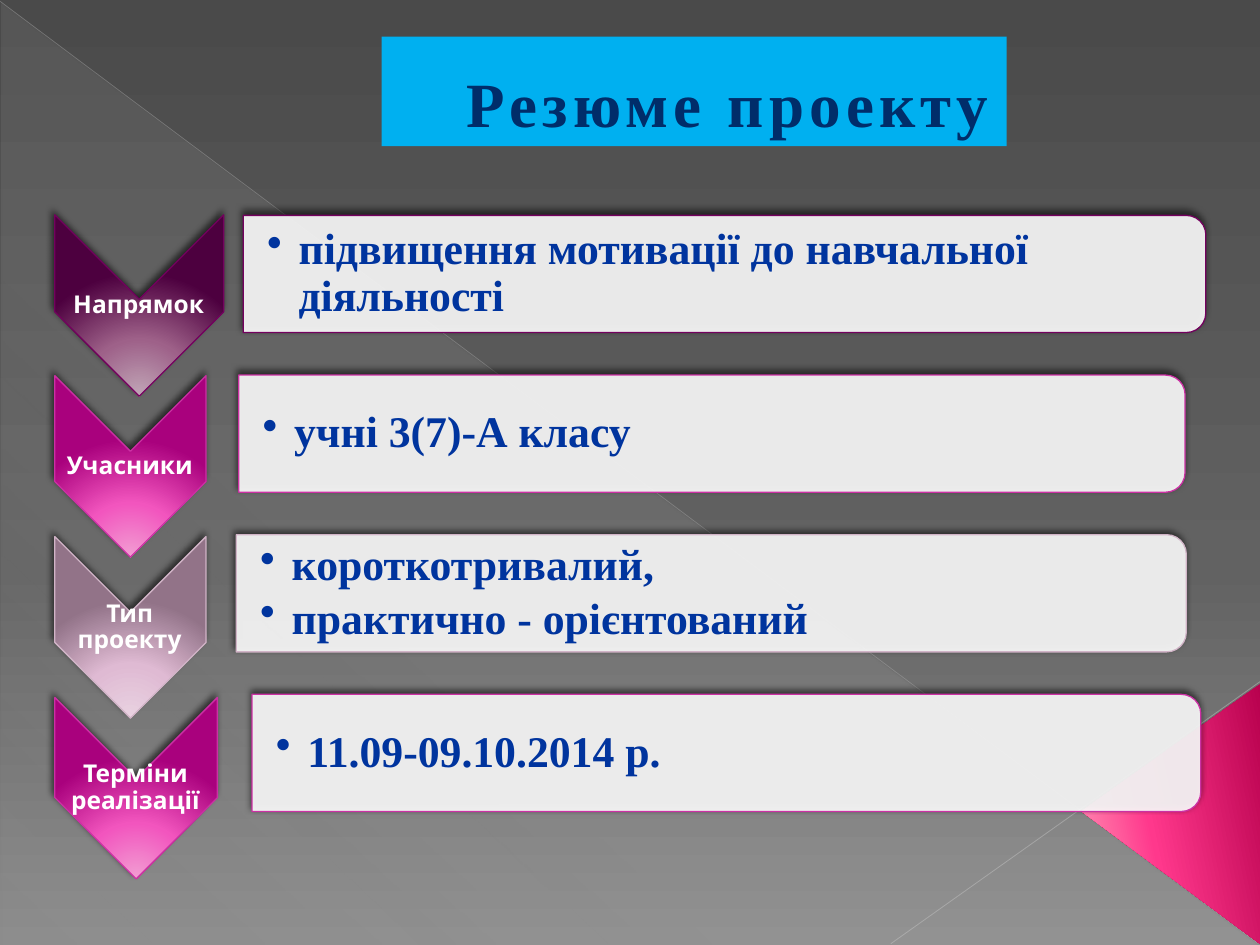
from dataclasses import dataclass

from lxml import etree
from pptx import Presentation
from pptx.dml.color import RGBColor
from pptx.enum.shapes import MSO_CONNECTOR, MSO_SHAPE
from pptx.enum.text import MSO_ANCHOR, PP_ALIGN
from pptx.oxml.ns import qn
from pptx.util import Inches, Pt

STRAIGHT = MSO_CONNECTOR.STRAIGHT
RECTANGLE, TRIANGLE = MSO_SHAPE.RECTANGLE, MSO_SHAPE.ISOSCELES_TRIANGLE
RIGHT_TRIANGLE, CHEVRON = MSO_SHAPE.RIGHT_TRIANGLE, MSO_SHAPE.CHEVRON
PANEL = MSO_SHAPE.ROUND_2_SAME_RECTANGLE
MIDDLE, BOTTOM = MSO_ANCHOR.MIDDLE, MSO_ANCHOR.BOTTOM
CENTER, LEFT = PP_ALIGN.CENTER, PP_ALIGN.LEFT
COLUMNS, ROWS = 100, 75


@dataclass(frozen=True)
class Theme:
    """Colours, fonts and type sizes of the slide."""
    serif: str = "Times New Roman"
    sans: str = "Quicksand"
    title_size: float = 36
    body_size: float = 25
    label_size: float = 14
    title: str = "002D6A"
    title_fill: str = "00B0F0"
    body: str = "00349E"
    white: str = "FFFFFF"
    shadow: str = "000000"
    diagonal: str = "BFBFBF"
    corner_line: str = "C6C6C6"
    background: tuple = ((0, "4A4A4A"), (60, "626262"), (100, "8C8C8C"))
    veil: tuple = ((0, "D2D2D2", 10), (70, "D2D2D2", 8), (100, "D2D2D2", 1))
    corner: tuple = ((0, "B8014E"), (60, "FF388C"), (100, "FF9CB9"))
    plum: tuple = ("C1A6B7", "9E6189", "4D003F", "73005E")
    magenta: tuple = ("F29ED3", "F255BE", "A9017D", "CC30A4")
    mauve: tuple = ("E9D2E1", "DFBAD3", "927388", "D1B4C7")


def add_child(parent, tag, **attributes):
    """Append an XML child with the given attributes."""
    return etree.SubElement(parent, qn(tag), {key: str(value) for key, value in attributes.items()})


def set_alpha(holder, percent):
    """Make the solid fill inside an element translucent."""
    color = holder.find(".//" + qn("a:srgbClr"))
    add_child(color, "a:alpha", val=percent * 1000)


def set_gradient(holder, stops, angle=None):
    """Replace a solid fill by a linear gradient, or a glow from below without an angle."""
    turns = 0 if angle is None else 1
    gradient = etree.Element(qn("a:gradFill"), {"rotWithShape": str(turns)})
    stop_list = add_child(gradient, "a:gsLst")
    for position, color, *alpha in stops:
        stop = add_child(stop_list, "a:gs", pos=position * 1000)
        tone = add_child(stop, "a:srgbClr", val=color)
        if alpha:
            add_child(tone, "a:alpha", val=alpha[0] * 1000)
    if angle is None:
        glow = add_child(gradient, "a:path", path="circle")
        add_child(glow, "a:fillToRect", l=50000, t=155000, r=50000, b=-55000)
    else:
        add_child(gradient, "a:lin", ang=angle * 60000, scaled=0)
    holder.replace(holder.find(qn("a:solidFill")), gradient)


class SlideBuilder:
    """Holds the theme and the current slide and draws on a grid."""

    def __init__(self, presentation, theme):
        """Add a blank slide and work out the grid."""
        self.theme = theme
        self.column = presentation.slide_width / COLUMNS
        self.row = presentation.slide_height / ROWS
        self.slide = presentation.slides.add_slide(presentation.slide_layouts[6])

    def place(self, x, y, width, height):
        """Turn grid units into slide lengths."""
        return (round(x * self.column), round(y * self.row),
                round(width * self.column), round(height * self.row))

    def background(self, stops):
        """Fill the background from top to bottom."""
        self.slide.background.fill.solid()
        set_gradient(self.slide.element.find(".//" + qn("p:bgPr")), stops, 90)

    def line(self, start, end, color, width, alpha):
        """Draw a faint straight line."""
        connector = self.slide.shapes.add_connector(
            STRAIGHT, *self.place(*start, *end))
        connector.line.color.rgb = RGBColor.from_string(color)
        connector.line.width = Pt(width)
        properties = connector.element.spPr
        set_alpha(properties, alpha)
        add_child(properties, "a:effectLst")

    def shape(self, kind, box, fill, outline=None, turn=0):
        """Draw a preset shape whose box is given as it appears after a quarter turn."""
        x, y, width, height = box
        if turn:
            x, y = x + (width - height) / 2, y + (height - width) / 2
            width, height = height, width
        shape = self.slide.shapes.add_shape(kind, *self.place(x, y, width, height))
        shape.rotation = turn
        shape.fill.solid()
        shape.fill.fore_color.rgb = RGBColor.from_string(fill)
        shape.shadow.inherit = False
        if outline:
            shape.line.color.rgb = RGBColor.from_string(outline)
            shape.line.width = Pt(0.75)
            self.shadow(shape)
        else:
            shape.line.fill.background()
        return shape

    def shadow(self, shape):
        """Cast a soft shadow to the upper left."""
        effects = shape.element.spPr.find(qn("a:effectLst"))
        outer = add_child(effects, "a:outerShdw", blurRad=Pt(4), dist=Pt(3),
                          dir=245 * 60000, rotWithShape=0)
        add_child(add_child(outer, "a:srgbClr", val=self.theme.shadow), "a:alpha", val=60000)

    def run(self, paragraph, text, font, size, color):
        """Add one bold run."""
        run = paragraph.add_run()
        run.text = text
        run.font.name, run.font.size, run.font.bold = font, Pt(size), True
        run.font.color.rgb = RGBColor.from_string(color)
        return run

    def title(self, box, text):
        """Draw the title on its coloured plate."""
        frame = self.shape(RECTANGLE, box, self.theme.title_fill).text_frame
        frame.word_wrap, frame.vertical_anchor = True, BOTTOM
        paragraph = frame.paragraphs[0]
        paragraph.alignment = CENTER
        paragraph._p.get_or_add_pPr().set("marL", str(Inches(0.53)))
        run = self.run(paragraph, text, self.theme.serif, self.theme.title_size, self.theme.title)
        run.font._element.set("spc", "300")

    def text(self, box, texts, font, size, color, inset, left_inset, after, bullets=False):
        """Write paragraphs centred vertically in a box."""
        frame = self.slide.shapes.add_textbox(*self.place(*box)).text_frame
        frame.word_wrap, frame.vertical_anchor = True, MIDDLE
        frame.margin_left = Inches(left_inset)
        frame.margin_top = frame.margin_right = frame.margin_bottom = Inches(inset)
        for index, text in enumerate(texts):
            paragraph = frame.add_paragraph() if index else frame.paragraphs[0]
            paragraph.alignment = LEFT if bullets else CENTER
            paragraph.line_spacing = 0.9
            paragraph.space_after = Pt(size * after)
            if bullets:
                properties = paragraph._p.get_or_add_pPr()
                properties.set("marL", str(Inches(0.25)))
                properties.set("indent", str(Inches(-0.25)))
                add_child(properties, "a:buChar", char="•")
            self.run(paragraph, text, font, size, color)

    def step(self, chevron_top, chevron_width, panel, colors, label, items):
        """Draw a labelled chevron with its bulleted panel."""
        theme = self.theme
        *tones, outline = colors
        chevron = (4.35, chevron_top, chevron_width, 14.4)
        shape = self.shape(CHEVRON, chevron, tones[0], outline, 90)
        set_gradient(shape.element.spPr, tuple(zip((0, 46, 100), tones)))
        self.text((4.3, chevron_top + 6, chevron_width, 2.4), [label],
                  theme.sans, theme.label_size, theme.white, 0.01, 0.01, 0.35)
        left, top, width = panel
        shape = self.shape(PANEL, (left, top, width, 9.3), theme.white, outline, 90)
        set_alpha(shape.element.spPr.find(qn("a:solidFill")), 90)
        self.text((left, top + 0.45, width - 0.5, 8.4), items,
                  theme.serif, theme.body_size, theme.body, 0.02, 0.19, 0.15, True)


def main():
    """Build and save the project summary slide."""
    presentation = Presentation()
    presentation.slide_width, presentation.slide_height = Inches(10), Inches(7.5)
    theme = Theme()
    builder = SlideBuilder(presentation, theme)
    builder.background(theme.background)
    veil = builder.shape(RIGHT_TRIANGLE, (0.1, 0.2, 99.8, 74.8), theme.veil[0][1])
    set_gradient(veil.element.spPr, theme.veil, 133)
    builder.line((0, 0.1), (99.9, 74.9), theme.diagonal, 0.39, 35)
    builder.line((100, 54.1), (70.7, 74.9), theme.corner_line, 0.47, 45)
    corner = builder.shape(TRIANGLE, (85.85, 54.25, 14.2, 20.7), theme.corner[0][1], turn=270)
    corner.adjustments[0] = 0.51
    set_gradient(corner.element.spPr, theme.corner, 258)
    builder.title((30.3, 2.9, 49.6, 8.7), "Резюме проекту")
    steps = (
        (13.4, 19.3, 76.4, theme.plum, "Напрямок", ["підвищення мотивації до навчальної діяльності"]),
        (12, 18.95, 75.1, theme.magenta, "Учасники", ["учні 3(7)-А класу"]),
        (12, 18.75, 75.4, theme.mauve, "Тип проекту", ["короткотривалий,", "практично - орієнтований"]),
        (12.9, 20, 75.3, theme.magenta, "Терміни реалізації", ["11.09-09.10.2014 р."]),
    )
    for index, (chevron_width, left, width, colors, label, items) in enumerate(steps):
        panel = (left, 17.1 + 12.67 * index, width)
        builder.step(17.05 + 12.77 * index, chevron_width, panel, colors, label, items)
    presentation.save("out.pptx")


if __name__ == "__main__":
    main()
